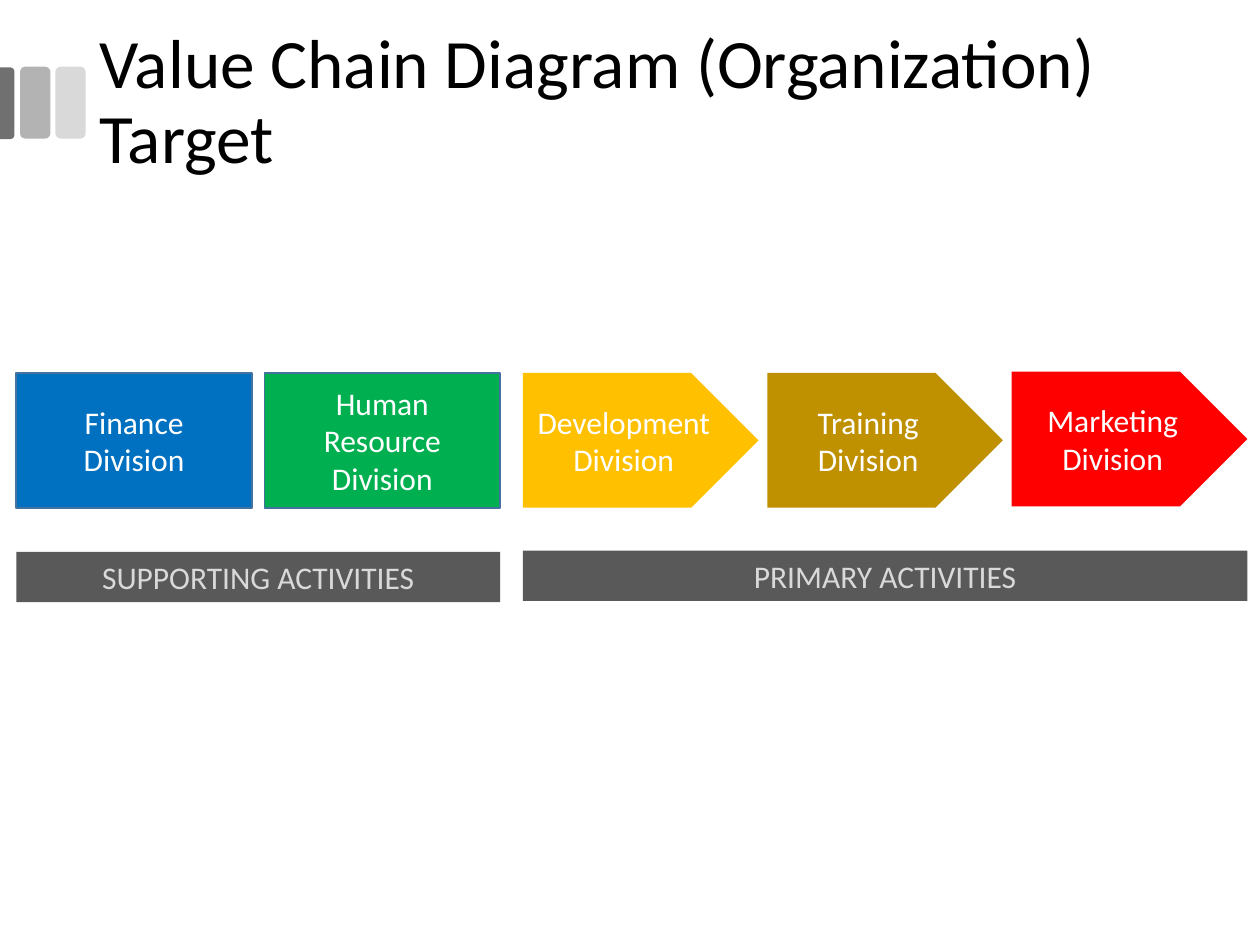
"""Build the target value chain diagram slide."""
from dataclasses import dataclass

from pptx import Presentation
from pptx.dml.color import RGBColor
from pptx.enum import shapes, text
from pptx.util import Inches, Pt


@dataclass(frozen=True)
class Theme:
    font: str = "Calibri"
    title_size: float = 39.6
    body_size: float = 18
    title: str = "000000"
    label: str = "FFFFFF"
    band: str = "595959"
    band_label: str = "D9D9D9"
    outline: str = "43739E"


THEME = Theme()
SHAPE = shapes.MSO_SHAPE
TITLE = "Value Chain Diagram (Organization)\vTarget"
TABS = [
    (SHAPE.ROUNDED_RECTANGLE, (0.44, 0.53, 0.24, 0.57), "D9D9D9"),
    (SHAPE.ROUNDED_RECTANGLE, (0.16, 0.53, 0.24, 0.57), "B3B3B3"),
    (SHAPE.ROUND_2_SAME_RECTANGLE, (-0.23, 0.76, 0.57, 0.12), "707070"),
]
GROUPS = [
    {
        "name": "SUPPORTING ACTIVITIES", "left": 0.13, "pitch": 1.97, "band_top": 4.38,
        "shape": SHAPE.RECTANGLE, "outline": THEME.outline,
        "divisions": [("Finance\vDivision", "0070C0", 2.96),
                      ("Human Resource Division", "00B050", 2.96)],
    },
    {
        "name": "PRIMARY ACTIVITIES", "left": 4.15, "pitch": 1.94, "band_top": 4.37,
        "shape": SHAPE.PENTAGON, "outline": None,
        "divisions": [("Development Division", "FFC000", 2.96),
                      ("Training Division", "BF9000", 2.96),
                      ("Marketing Division", "FF0000", 2.95)],
    },
]
DIVISION_WIDTH, DIVISION_HEIGHT, BAND_HEIGHT = 1.87, 1.07, 0.4


def style_text(paragraph, size, color, alignment):
    paragraph.alignment = alignment
    paragraph.font.name = THEME.font
    paragraph.font.size = Pt(size)
    paragraph.font.color.rgb = RGBColor.from_string(color)


def add_block(slide, kind, box, fill, label="", color=THEME.label, outline=None):
    shape = slide.shapes.add_shape(kind, *map(Inches, box))
    shape.shadow.inherit = False
    shape.fill.solid()
    shape.fill.fore_color.rgb = RGBColor.from_string(fill)
    if outline:
        shape.line.color.rgb = RGBColor.from_string(outline)
        shape.line.width = Pt(1)
    else:
        shape.line.fill.background()
    if label:
        frame = shape.text_frame
        frame.word_wrap = True
        frame.vertical_anchor = text.MSO_ANCHOR.MIDDLE
        frame.text = label
        style_text(frame.paragraphs[0], THEME.body_size, color, text.PP_ALIGN.CENTER)
    return shape


def add_title(slide):
    title = slide.shapes.title
    title.left, title.top, title.width, title.height = map(Inches, (0.69, 0.17, 8.62, 1.31))
    frame = title.text_frame
    frame.text = TITLE
    frame.word_wrap = True
    frame.auto_size = text.MSO_AUTO_SIZE.NONE
    frame.vertical_anchor = text.MSO_ANCHOR.MIDDLE
    paragraph = frame.paragraphs[0]
    paragraph.line_spacing = 0.9
    style_text(paragraph, THEME.title_size, THEME.title, text.PP_ALIGN.LEFT)


def add_group(slide, group):
    divisions = group["divisions"]
    width = group["pitch"] * (len(divisions) - 1) + DIVISION_WIDTH
    add_block(slide, SHAPE.RECTANGLE, (group["left"], group["band_top"], width, BAND_HEIGHT),
              THEME.band, group["name"], THEME.band_label)
    for index, (label, fill, top) in enumerate(divisions):
        left = group["left"] + index * group["pitch"]
        add_block(slide, group["shape"], (left, top, DIVISION_WIDTH, DIVISION_HEIGHT),
                  fill, label, outline=group["outline"])


def main():
    presentation = Presentation()
    presentation.slide_width, presentation.slide_height = Inches(10), Inches(7.5)
    slide = presentation.slides.add_slide(presentation.slide_layouts[5])
    for kind, box, fill in TABS:
        tab = add_block(slide, kind, box, fill)
        if kind == SHAPE.ROUND_2_SAME_RECTANGLE:
            tab.rotation = 90
            tab.adjustments[0] = 0.29
    add_title(slide)
    for group in GROUPS:
        add_group(slide, group)
    presentation.save("out.pptx")


if __name__ == "__main__":
    main()
